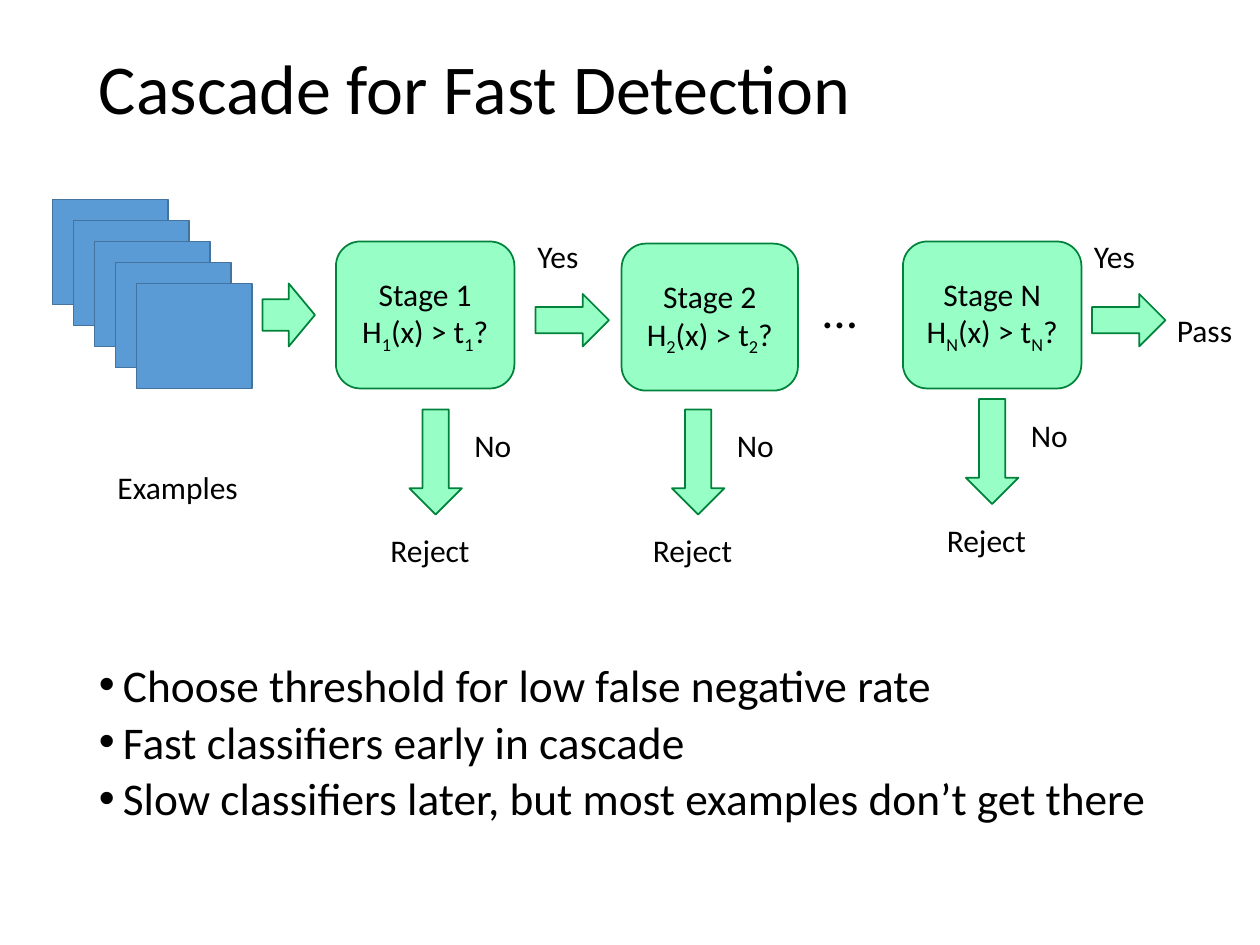
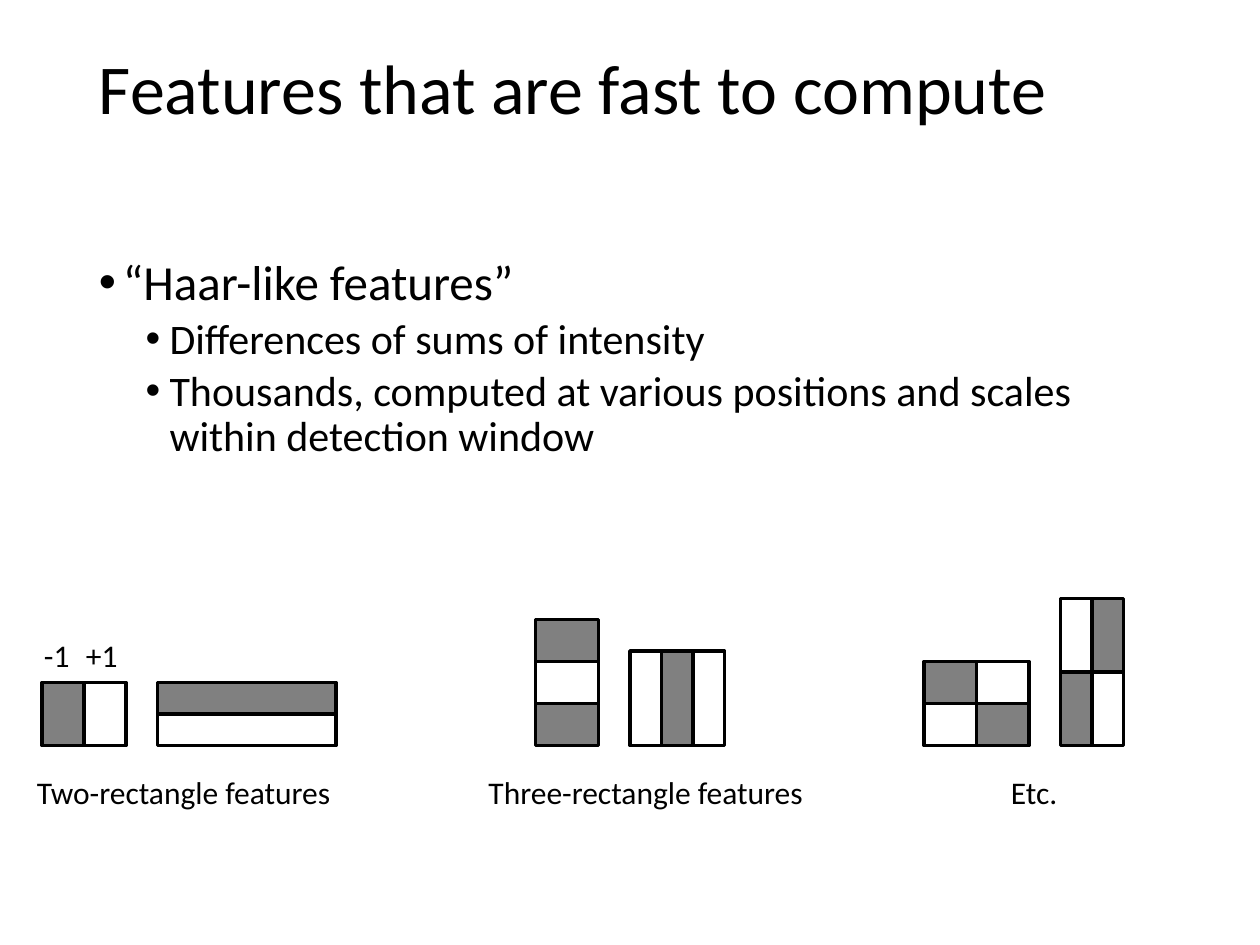
from dataclasses import dataclass
from typing import NamedTuple

from lxml import etree
from pptx import Presentation
from pptx.dml.color import RGBColor
from pptx.oxml.ns import qn
from pptx.util import Inches, Pt
from pptx.enum import shapes, text

COLS, ROWS = 120, 90
WIDE, HIGH = Inches(10), Inches(7.5)
KIND = shapes.MSO_SHAPE
ALIGN = text.PP_ALIGN
LABEL_H = 4.8


class Paint(NamedTuple):
    fill: str
    line: str
    width: float


@dataclass(frozen=True)
class Theme:
    font: str = "Calibri"
    ink: str = "000000"
    title: float = 40
    head: float = 28
    sub: float = 24
    point: float = 25.9
    label: float = 18
    stage: Paint = Paint("97FFC6", "00823B", 1)
    image: Paint = Paint("5B9BD5", "43739E", 1)
    dark: Paint = Paint("808080", "000000", 2)
    light: Paint = Paint("FFFFFF", "000000", 2)


THEME = Theme()


class Box(NamedTuple):
    x: float
    y: float
    w: float
    h: float

    def place(self) -> tuple[int, int, int, int]:
        col, row = WIDE / COLS, HIGH / ROWS
        return (round(self.x * col), round(self.y * row),
                round(self.w * col), round(self.h * row))


class Stage(NamedTuple):
    name: str
    box: Box
    drop_x: float
    drop_y: float


class Label(NamedTuple):
    words: str
    x: float
    y: float
    w: float


class Bullet(NamedTuple):
    words: str
    size: float
    level: int = 0


class Feature(NamedTuple):
    x: float
    w: float
    h: float
    rows: tuple[str, ...]


TITLE_BOX = Box(8.25, 0, 103.5, 17.4)
STACK = 5
STAGES = (
    Stage("1", Box(32, 23, 17, 14), 39, 39),
    Stage("2", Box(59.2, 23.2, 16.8, 14), 64, 39),
    Stage("N", Box(86, 23, 17, 14), 92, 38),
)
YES_X = (51, 104)
POINTS = (
    "Choose threshold for low false negative rate",
    "Fast classifiers early in cascade",
    "Slow classifiers later, but most examples don’t get there",
)
HAAR = (
    Bullet("“Haar-like features”", THEME.head),
    Bullet("Differences of sums of intensity", THEME.sub, 1),
    Bullet("Thousands, computed at various positions and scales within "
           "detection window", THEME.sub, 1),
)
BASE = 71
FEATURES = (
    Feature(4, 4, 6, ("#.",)),
    Feature(15, 17, 3, ("#", ".")),
    Feature(51, 6, 4, ("#", ".", "#")),
    Feature(60, 3, 9, (".#.",)),
    Feature(88, 5, 4, ("#.", ".#")),
    Feature(101, 3, 7, (".#", "#.")),
)
SIGNS = (Label("-1", 3, 60, 5.2), Label("+1", 7, 60, 5.9))
NOTES = (
    Label("Two-rectangle features", 0, 73, 35),
    Label("Three-rectangle features", 43, 73, 37),
    Label("Etc.", 81, 73, 35),
)


def add_run(para, words: str, size: float, base: int = 0) -> None:
    run = para.add_run()
    run.text = words
    run.font.name = THEME.font
    run.font.size = Pt(size)
    run.font.color.rgb = RGBColor.from_string(THEME.ink)
    if base:
        run.font._element.set("baseline", str(base * 1000))


def add_frame(slide, box: Box, wrap: bool = True):
    frame = slide.shapes.add_textbox(*box.place()).text_frame
    frame.word_wrap = wrap
    return frame


def add_title(slide, words: str) -> None:
    frame = add_frame(slide, TITLE_BOX)
    frame.vertical_anchor = text.MSO_ANCHOR.MIDDLE
    para = frame.paragraphs[0]
    para.line_spacing = 0.9
    add_run(para, words, THEME.title)


def add_label(slide, label: Label, size: float = THEME.label,
              high: float = LABEL_H, center: bool = False) -> None:
    frame = add_frame(slide, Box(label.x, label.y, label.w, high), center)
    frame.auto_size = text.MSO_AUTO_SIZE.SHAPE_TO_FIT_TEXT
    para = frame.paragraphs[0]
    para.alignment = ALIGN.CENTER if center else ALIGN.LEFT
    add_run(para, label.words, size)


def add_list(slide, box: Box, items: tuple[Bullet, ...], gap: float) -> None:
    frame = add_frame(slide, box)
    for i, item in enumerate(items):
        para = frame.add_paragraph() if i else frame.paragraphs[0]
        para.level = item.level
        props = para._p.get_or_add_pPr()
        props.set("marL", str(Inches(0.19 + 0.37 * item.level)))
        props.set("indent", str(-Inches(0.19)))
        etree.SubElement(props, qn("a:buFont"), typeface="Arial")
        etree.SubElement(props, qn("a:buChar"), char="•")
        para.line_spacing = gap
        if i:
            para.space_before = Pt(3.8 if item.level else 7.5)
        add_run(para, item.words, item.size)


def add_block(slide, kind: shapes.MSO_SHAPE, box: Box, paint: Paint):
    block = slide.shapes.add_shape(kind, *box.place())
    block.shadow.inherit = False
    block.fill.solid()
    block.fill.fore_color.rgb = RGBColor.from_string(paint.fill)
    block.line.color.rgb = RGBColor.from_string(paint.line)
    block.line.width = Pt(paint.width)
    return block


def add_stage(slide, stage: Stage) -> None:
    block = add_block(slide, KIND.ROUNDED_RECTANGLE, stage.box, THEME.stage)
    frame = block.text_frame
    frame.vertical_anchor = text.MSO_ANCHOR.MIDDLE
    name, test = frame.paragraphs[0], frame.add_paragraph()
    name.alignment = test.alignment = ALIGN.CENTER
    add_run(name, f"Stage {stage.name}", THEME.label)
    for words, base in (("H", 0), (stage.name, -25), ("(x) > t", 0),
                        (stage.name, -25), ("?", 0)):
        add_run(test, words, THEME.label, base)
    x, y = stage.drop_x, stage.drop_y
    add_block(slide, KIND.DOWN_ARROW, Box(x, y, 5, 10), THEME.stage)
    add_label(slide, Label("No", x + 5, y + 1, 6.2))
    add_label(slide, Label("Reject", x - 3, y + 11, 11))


def add_feature(slide, feat: Feature) -> None:
    top = BASE - feat.h * len(feat.rows)
    for r, row in enumerate(feat.rows):
        for c, mark in enumerate(row):
            cell = Box(feat.x + c * feat.w, top + r * feat.h, feat.w, feat.h)
            paint = THEME.dark if mark == "#" else THEME.light
            add_block(slide, KIND.RECTANGLE, cell, paint)


def draw_cascade(slide) -> None:
    add_title(slide, "Cascade for Fast Detection")
    for i in range(STACK):
        add_block(slide, KIND.RECTANGLE, Box(5 + 2 * i, 19 + 2 * i, 11, 10),
                  THEME.image)
    add_label(slide, Label("Examples", 10, 44, 15.7))
    add_block(slide, KIND.RIGHT_ARROW, Box(25, 27, 5, 6), THEME.stage)
    for stage in STAGES:
        add_stage(slide, stage)
    for x in YES_X:
        add_block(slide, KIND.RIGHT_ARROW, Box(x, 28, 7, 5), THEME.stage)
        add_label(slide, Label("Yes", x - 1, 22, 7.3))
    add_label(slide, Label("…", 77.2, 26, 7.2), THEME.head, 6.8)
    add_label(slide, Label("Pass", 110.9, 29, 9.1))
    items = tuple(Bullet(words, THEME.point) for words in POINTS)
    add_list(slide, Box(8.25, 63, 103.5, 18), items, 0.8)


def draw_features(slide) -> None:
    add_title(slide, "Features that are fast to compute")
    add_list(slide, Box(8.25, 24, 103.5, 24), HAAR, 0.9)
    for feat in FEATURES:
        add_feature(slide, feat)
    for sign in SIGNS:
        add_label(slide, sign)
    for note in NOTES:
        add_label(slide, note, center=True)


def main() -> None:
    deck = Presentation()
    deck.slide_width, deck.slide_height = WIDE, HIGH
    for draw in (draw_cascade, draw_features):
        draw(deck.slides.add_slide(deck.slide_layouts[6]))
    deck.save("out.pptx")


if __name__ == "__main__":
    main()
